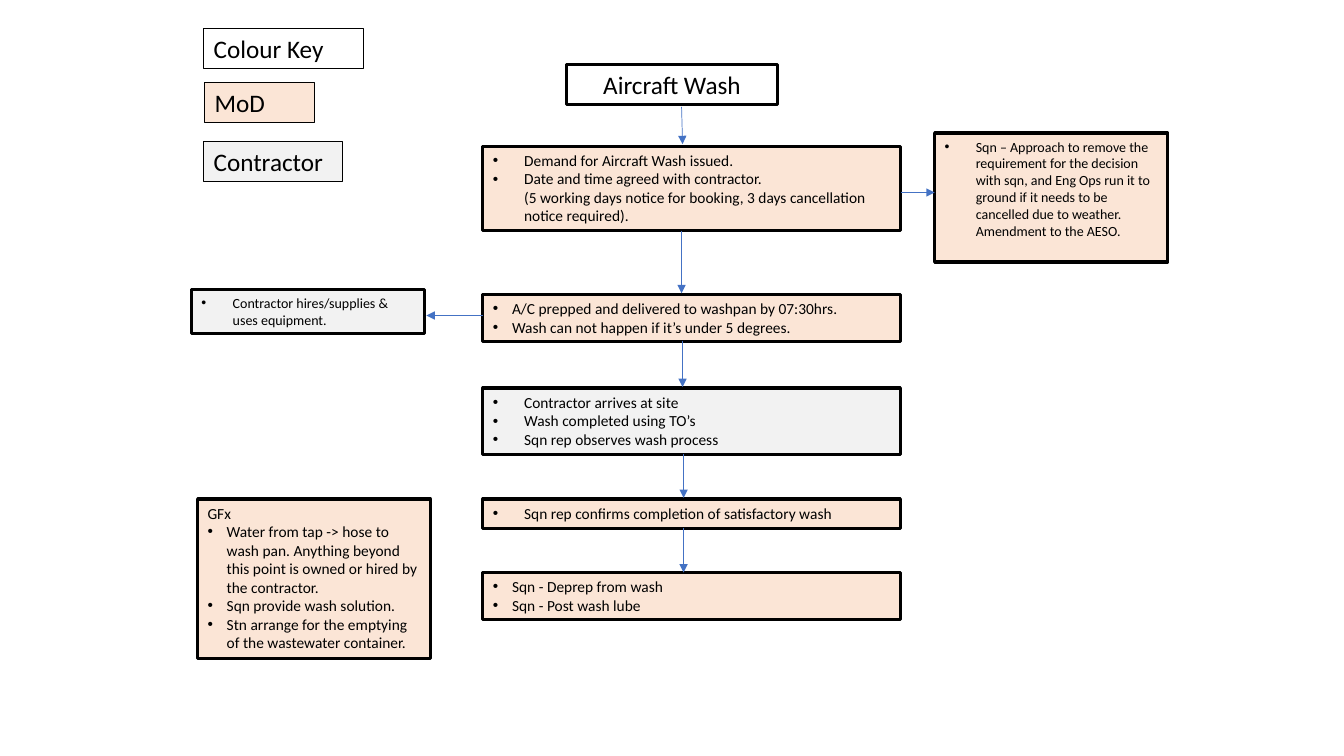
from lxml import etree
from pptx import Presentation, util as u
from pptx.dml.color import RGBColor
from pptx.enum import shapes, text
from pptx.oxml.ns import qn

PX = 9144
THEME = {
    "font": "Calibri",
    "black": RGBColor.from_string("000000"),
    "white": RGBColor.from_string("FFFFFF"),
    "mod": RGBColor.from_string("FBE5D6"),
    "contractor": RGBColor.from_string("F2F2F2"),
    "arrow": RGBColor.from_string("4472C4"),
    "heading": 18,
    "step": 11,
    "note": 10,
}


def write_text(shape, lines, size="step", indent=0, plain_lines=0, align=text.PP_ALIGN.LEFT):
    frame = shape.text_frame
    frame.word_wrap = True
    frame.auto_size = text.MSO_AUTO_SIZE.NONE
    frame.vertical_anchor = text.MSO_ANCHOR.TOP
    for index, line in enumerate(lines):
        paragraph = frame.add_paragraph() if index else frame.paragraphs[0]
        paragraph.text = line
        paragraph.alignment = align
        for run in paragraph.runs:
            run.font.name = THEME["font"]
            run.font.size = u.Pt(THEME[size])
            run.font.color.rgb = THEME["black"]
        for line_break in paragraph._p.findall(qn("a:br")):
            etree.SubElement(line_break, qn("a:rPr"), sz=str(THEME[size] * 100))
        if indent and index >= plain_lines:
            properties = paragraph._p.get_or_add_pPr()
            properties.set("marL", str(indent * PX))
            properties.set("indent", str(-indent * PX))
            etree.SubElement(properties, qn("a:buFont"), typeface="Arial")
            etree.SubElement(properties, qn("a:buChar"), char="•")


def add_box(slide, bounds, fill, lines, border=2.25, **text_format):
    box = slide.shapes.add_shape(shapes.MSO_SHAPE.RECTANGLE, *(value * PX for value in bounds))
    box.shadow.inherit = False
    box.fill.solid()
    box.fill.fore_color.rgb = THEME[fill]
    box.line.color.rgb = THEME["black"]
    box.line.width = u.Pt(border)
    write_text(box, lines, **text_format)


presentation = Presentation()
presentation.slide_width = 1333 * PX
presentation.slide_height = 750 * PX
slide = presentation.slides.add_slide(presentation.slide_layouts[5])

title = slide.shapes.title
title.left, title.top, title.width, title.height = (value * PX for value in (562, 64, 209, 40))
title.line.color.rgb = THEME["black"]
title.line.width = u.Pt(2.25)
write_text(title, ["Aircraft Wash"], size="heading", align=text.PP_ALIGN.CENTER)

colour_key = [
    (202, 28, 159, "white", "Colour Key"),
    (203, 82, 109, "mod", "MoD"),
    (202, 140, 138, "contractor", "Contractor"),
]
for left, top, width, fill, label in colour_key:
    add_box(slide, (left, top, width, 40), fill, [label], border=0.75, size="heading")

steps = [
    (145, 84, "mod", 31, [
        "Demand for Aircraft Wash issued.",
        "Date and time agreed with contractor.\v"
        "(5 working days notice for booking, 3 days cancellation notice required).",
    ]),
    (292, 47, "mod", 19, [
        "A/C prepped and delivered to washpan by 07:30hrs.",
        "Wash can not happen if it’s under 5 degrees.",
    ]),
    (385, 66, "contractor", 31, [
        "Contractor arrives at site",
        "Wash completed using TO’s",
        "Sqn rep observes wash process",
    ]),
    (495, 29, "mod", 31, ["Sqn rep confirms completion of satisfactory wash"]),
    (568, 47, "mod", 19, ["Sqn - Deprep from wash", "Sqn - Post wash lube"]),
]
for top, height, fill, indent, lines in steps:
    add_box(slide, (479, top, 414, height), fill, lines, indent=indent)

add_box(slide, (927, 132, 231, 128), "mod", [
    "Sqn – Approach to remove the requirement for the decision with sqn, and Eng Ops "
    "run it to ground if it needs to be cancelled due to weather. Amendment to the AESO.",
], size="note", indent=31)
add_box(slide, (190, 287, 231, 44), "contractor",
        ["Contractor hires/supplies & uses equipment."], size="note", indent=31)
add_box(slide, (196, 495, 231, 158), "mod", [
    "GFx",
    "Water from tap -> hose to wash pan. Anything beyond this point is owned or hired "
    "by the contractor.",
    "Sqn provide wash solution.",
    "Stn arrange for the emptying of the wastewater container.",
], indent=19, plain_lines=1)

arrows = [
    (676, 106, 677, 143),
    (676, 229, 676, 291),
    (677, 338, 677, 384),
    (678, 450, 678, 494),
    (678, 524, 678, 568),
    (479, 313, 423, 313),
    (894, 191, 927, 191),
]
for ends in arrows:
    arrow = slide.shapes.add_connector(
        shapes.MSO_CONNECTOR.STRAIGHT, *(value * PX for value in ends))
    arrow.line.color.rgb = THEME["arrow"]
    arrow.line.width = u.Pt(0.5)
    etree.SubElement(arrow.line._get_or_add_ln(), qn("a:tailEnd"), type="triangle")
    etree.SubElement(arrow._element.spPr, qn("a:effectLst"))

presentation.save("out.pptx")
